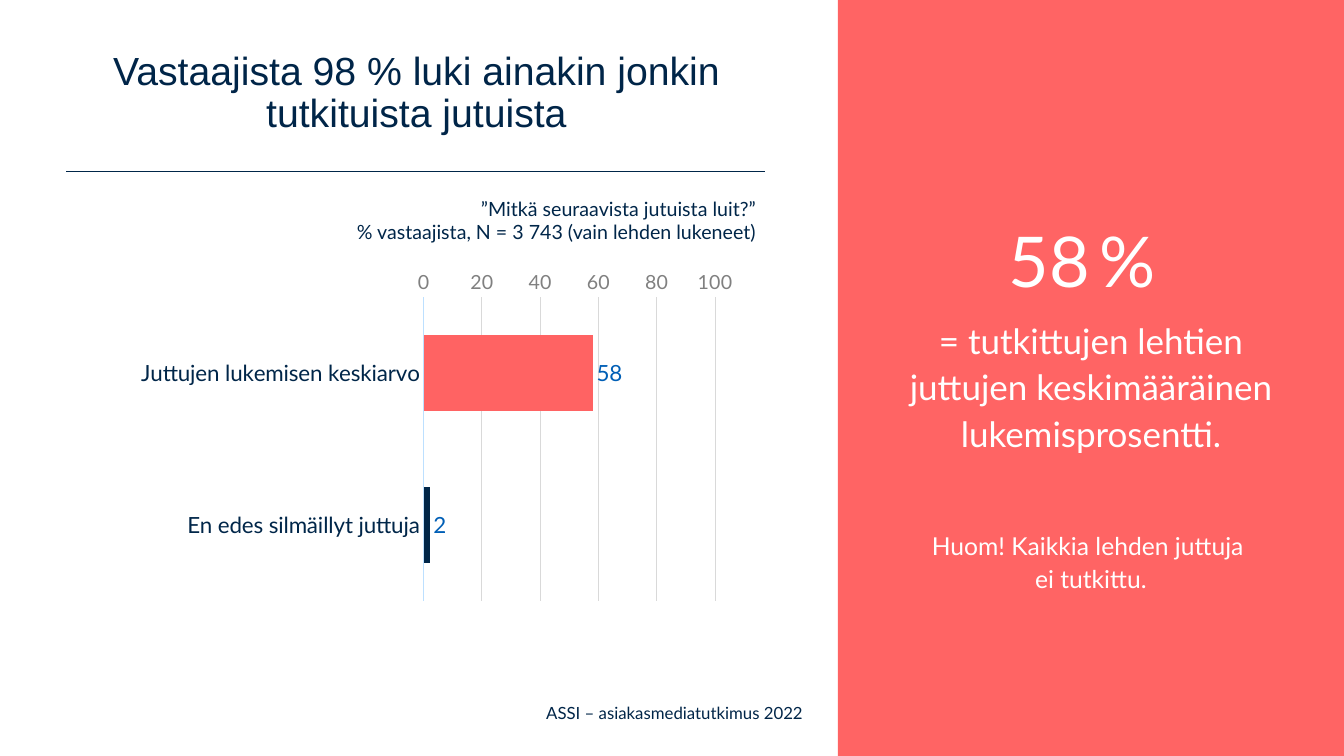
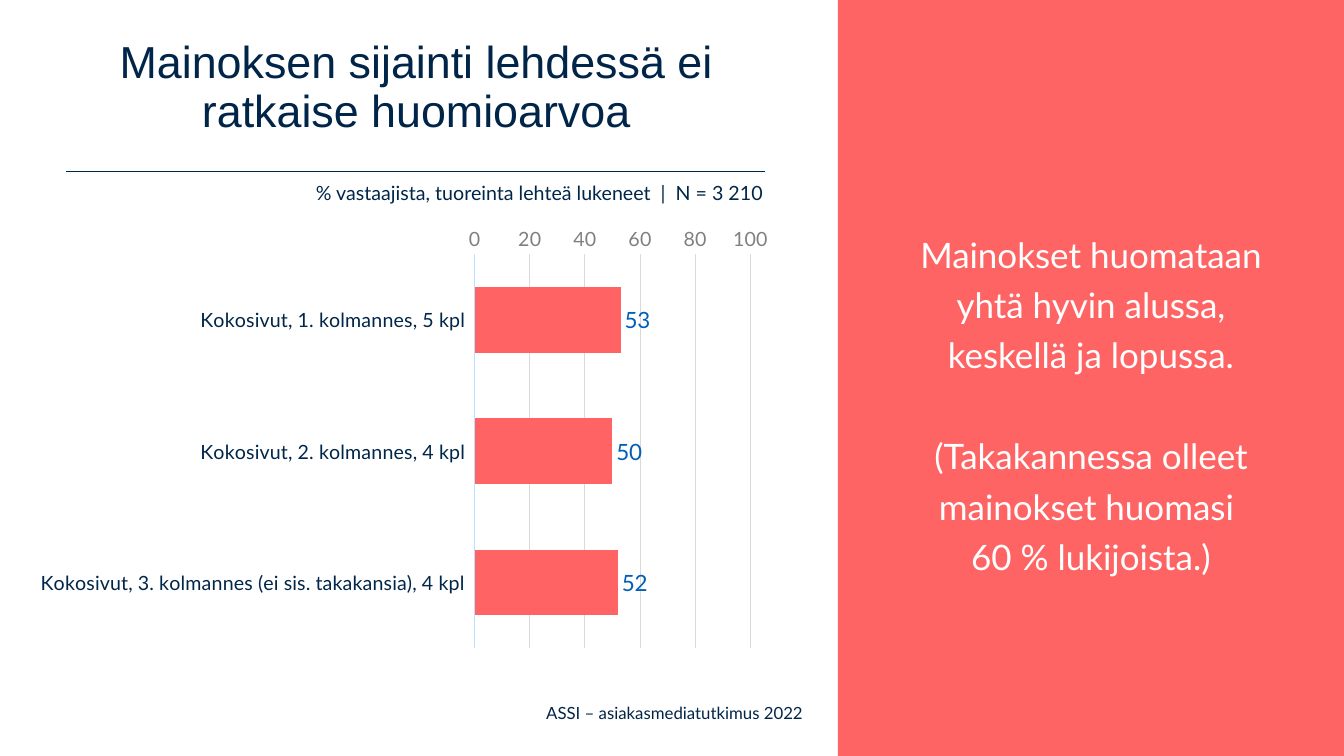
from lxml import etree
from pptx import Presentation
from pptx import util as u
from pptx.chart import data
from pptx.dml.color import RGBColor
from pptx.enum import chart as ch, shapes, text
from pptx.oxml import ns

HUES = {
    "navy": "002548", "ink": "002649", "coral": "FF6464", "bar": "FF6363",
    "white": "FFFFFF", "gray": "808080", "grid": "D9D9D9", "sky": "BDE0FF",
    "blue": "005FB6",
}
WIDE, HIGH = u.Inches(13.33), u.Inches(7.5)
LEFT, SPAN = 4.95, 52.06
PANEL = 62.34
MID, TOP, LOW = (text.MSO_ANCHOR.MIDDLE, text.MSO_ANCHOR.TOP,
                 text.MSO_ANCHOR.BOTTOM)
MAIN, HEAD = "Lato", "Arial"


def hue(name):
    """Return the named colour."""
    return RGBColor.from_string(HUES[name])


def place(x, y, w, h):
    """Turn percent shares of the slide into lengths."""
    return [int(side * part / 100)
            for side, part in zip((WIDE, HIGH, WIDE, HIGH), (x, y, w, h))]


def style(font, size, color, face=MAIN):
    """Set the size, colour and face of a font."""
    font.size, font.name = u.Pt(size), face
    font.color.rgb = hue(color)


def write(slide, box, paras, color, face=MAIN, align="CENTER", anchor=MID,
          lead=None):
    """Write (content, size, space before) paragraphs in a text box."""
    frame = slide.shapes.add_textbox(*place(*box)).text_frame
    frame.word_wrap, frame.vertical_anchor = True, anchor
    for i, (words, size, gap) in enumerate(paras):
        para = frame.add_paragraph() if i else frame.paragraphs[0]
        para.alignment = getattr(text.PP_ALIGN, align)
        if lead:
            para.line_spacing = lead
        if gap:
            para.space_before = u.Pt(gap)
        style(para.font, size, color, face)
        if isinstance(words, str):
            para.text = words
            continue
        for part, points in words:
            run = para.add_run()
            run.text, run.font.size = part, u.Pt(points)
    return frame


def base(deck):
    """Add a slide with the shared footer, panel and rule."""
    slide = deck.slides.add_slide(deck.slide_layouts[6])
    foot = write(slide, (0.2, 93.2, 100, 2.4),
                 [("ASSI – asiakasmediatutkimus 2022", 12, 0)], "navy", lead=0.9)
    foot.margin_top = foot.margin_bottom = 0
    panel = slide.shapes.add_shape(shapes.MSO_SHAPE.RECTANGLE,
                                   *place(PANEL, 0, 100 - PANEL, 100))
    panel.shadow.inherit = False
    panel.fill.solid()
    panel.fill.fore_color.rgb = hue("coral")
    panel.line.fill.background()
    x, y, w, _ = place(LEFT, 22.67, 52, 0)
    rule = slide.shapes.add_connector(shapes.MSO_CONNECTOR.STRAIGHT,
                                      x, y, x + w, y)
    rule.line.color.rgb, rule.line.width = hue("ink"), u.Pt(1)
    etree.SubElement(rule.element.spPr, ns.qn("a:effectLst"))
    return slide


def title(slide, words, size, top, high, anchor):
    """Write the slide title."""
    write(slide, (LEFT, top, SPAN, high), [(words, size, 0)], "navy", HEAD,
          anchor=anchor, lead=0.9)


def basis(slide, words, top, span):
    """Write the right-aligned question and sample size."""
    write(slide, (LEFT, top, span, 5), [(words, 14, 0)], "ink",
          align="RIGHT", anchor=TOP)


def aside(slide, paras, lead):
    """Write the message on the coloured panel."""
    write(slide, (66.17, 22.67, 30, 60.8), paras, "white", lead=lead)


def fit(chart, inner):
    """Clear the chart background and fix the inner plot area."""
    space = chart.element
    body = space.find(ns.qn("c:chart"))
    clear = etree.Element(ns.qn("c:spPr"))
    etree.SubElement(clear, ns.qn("a:noFill"))
    edge = etree.SubElement(clear, ns.qn("a:ln"))
    etree.SubElement(edge, ns.qn("a:noFill"))
    body.addnext(clear)
    plot = body.find(ns.qn("c:plotArea"))
    for old in plot.findall(ns.qn("c:layout")):
        plot.remove(old)
    lay = etree.Element(ns.qn("c:layout"))
    hand = etree.SubElement(lay, ns.qn("c:manualLayout"))
    rules = [("layoutTarget", "inner"), ("xMode", "edge"), ("yMode", "edge")]
    for tag, val in rules + list(zip("xywh", inner)):
        etree.SubElement(hand, ns.qn("c:" + tag)).set("val", str(val))
    plot.insert(0, lay)


def bars(slide, box, inner, rows, size, dark=()):
    """Add a bar chart of rows, with the dark points in navy."""
    feed = data.CategoryChartData(number_format="0")
    feed.categories = list(rows)
    feed.add_series("Series 1", list(rows.values()))
    chart = slide.shapes.add_chart(ch.XL_CHART_TYPE.BAR_CLUSTERED,
                                   *place(*box), feed).chart
    chart.has_title = chart.has_legend = False
    style(chart.font, 10, "ink", "Calibri")
    fit(chart, inner)

    cat, val = chart.category_axis, chart.value_axis
    for axis in (cat, val):
        axis.major_tick_mark = axis.minor_tick_mark = ch.XL_TICK_MARK.NONE
    cat.reverse_order = True
    cat.crosses = ch.XL_AXIS_CROSSES.MAXIMUM
    cat.format.line.color.rgb = hue("sky")
    cat.format.line.width = u.Pt(0.75)
    style(cat.tick_labels.font, size, "ink")
    val.minimum_scale, val.maximum_scale, val.major_unit = 0, 100, 20
    val.format.line.fill.background()
    val.has_major_gridlines = True
    grid = val.major_gridlines.format.line
    grid.color.rgb, grid.width = hue("grid"), u.Pt(0.75)
    style(val.tick_labels.font, 14, "gray")

    plot = chart.plots[0]
    plot.gap_width, plot.vary_by_categories = 100, False
    plot.has_data_labels = True
    tags = plot.data_labels
    tags.show_value = True
    tags.position = ch.XL_LABEL_POSITION.OUTSIDE_END
    tags.number_format, tags.number_format_is_linked = "#,##0", False
    style(tags.font, 16, "blue")
    series = plot.series[0]
    for part, tone in [(series, "bar")] + [(series.points[i], "ink")
                                           for i in dark]:
        part.format.fill.solid()
        part.format.fill.fore_color.rgb = hue(tone)


def reads(deck):
    """Build the slide on how many read the stories."""
    slide = base(deck)
    bars(slide, (2.1, 35.6, 52.74, 52.53), (0.558, 0.065, 0.411, 0.77),
         {"Juttujen lukemisen keskiarvo": 58, "En edes silmäillyt juttuja": 2},
         16, dark=[1])
    basis(slide, "”Mitkä seuraavista jutuista luit?”\v"
          "% vastaajista, N = 3 743 (vain lehden lukeneet)", 25.33, SPAN)
    aside(slide, [
        ([("58", 50), (" ", 25), ("% ", 50)], 50, 0),
        ("= tutkittujen lehtien juttujen keskimääräinen lukemisprosentti.",
         25, 10),
        ("Huom! Kaikkia lehden juttuja \vei tutkittu.", 17.6, 53),
    ], 1.1)
    title(slide, "Vastaajista 98 % luki ainakin jonkin tutkituista jutuista",
          28, 2.13, 16.53, LOW)


def spots(deck):
    """Build the slide on where the advert is placed."""
    slide = base(deck)
    title(slide, "Mainoksen sijainti lehdessä ei ratkaise huomioarvoa",
          32, 0.8, 21.87, MID)
    bars(slide, (1.8, 29.47, 65.34, 64.53), (0.513, 0.065, 0.314, 0.807),
         {"Kokosivut, 1. kolmannes, 5 kpl ": 53,
          "Kokosivut, 2. kolmannes, 4 kpl ": 50,
          "Kokosivut, 3. kolmannes (ei sis. takakansia), 4 kpl ": 52}, 14)
    basis(slide, "% vastaajista, tuoreinta lehteä lukeneet  |  N = 3 210",
          23.33, 52.59)
    aside(slide, [
        ("Mainokset huomataan yhtä hyvin alussa, keskellä ja lopussa.", 25, 0),
        ("(Takakannessa olleet mainokset huomasi \v60 % lukijoista.)", 25, 36),
    ], 1.2)


def main():
    """Build and save the deck."""
    deck = Presentation()
    deck.slide_width, deck.slide_height = WIDE, HIGH
    reads(deck)
    spots(deck)
    deck.save("out.pptx")


if __name__ == "__main__":
    main()
